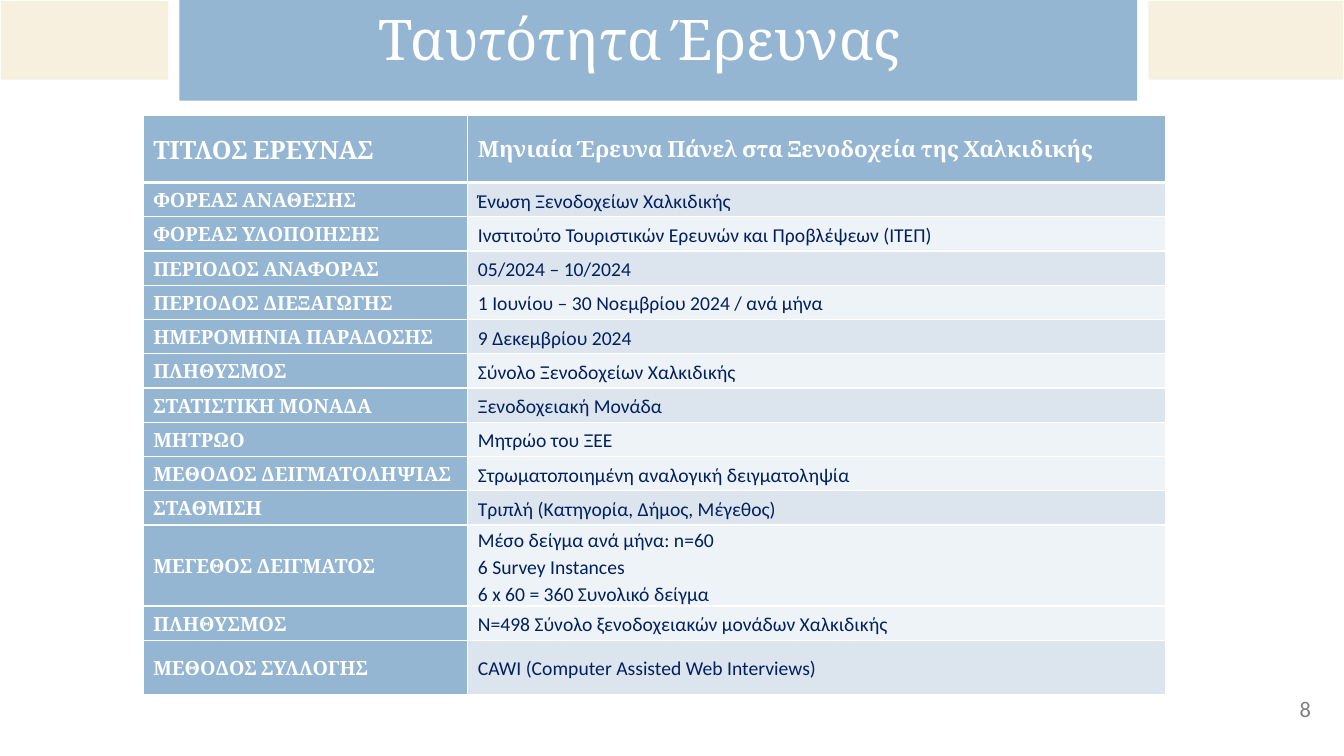
from lxml import etree
from pptx import Presentation
from pptx.dml.color import RGBColor
from pptx.enum.shapes import MSO_SHAPE as Shape
from pptx.enum.text import MSO_ANCHOR as Anchor, MSO_AUTO_SIZE as AutoSize, PP_ALIGN as Align
from pptx.oxml.ns import qn
from pptx.util import Emu, Pt

EMU_PER_PX = 9144
COLORS = {
    "blue": "94B6D2", "cream": "F7F0DE", "white": "FFFFFF", "navy": "002060",
    "grey": "808080", "tint": "DCE5EE", "pale": "EEF3F7",
}
HEADING = ("ΤΙΤΛΟΣ ΕΡΕΥΝΑΣ", "Μηνιαία Έρευνα Πάνελ στα Ξενοδοχεία της Χαλκιδικής")
DETAILS = [
    ("ΦΟΡΕΑΣ ΑΝΑΘΕΣΗΣ", "Ένωση Ξενοδοχείων Χαλκιδικής", "tint"),
    ("ΦΟΡΕΑΣ ΥΛΟΠΟΙΗΣΗΣ", "Ινστιτούτο Τουριστικών Ερευνών και Προβλέψεων (ΙΤΕΠ)", "pale"),
    ("ΠΕΡΙΟΔΟΣ ΑΝΑΦΟΡΑΣ", "05/2024 – 10/2024", "tint"),
    ("ΠΕΡΙΟΔΟΣ ΔΙΕΞΑΓΩΓΗΣ", "1 Ιουνίου – 30 Νοεμβρίου 2024 / ανά μήνα", "pale"),
    ("ΗΜΕΡΟΜΗΝΙΑ ΠΑΡΑΔΟΣΗΣ", "9 Δεκεμβρίου 2024", "tint"),
    ("ΠΛΗΘΥΣΜΟΣ", "Σύνολο Ξενοδοχείων Χαλκιδικής", "pale"),
    ("ΣΤΑΤΙΣΤΙΚΗ ΜΟΝΑΔΑ", "Ξενοδοχειακή Μονάδα", "tint"),
    ("ΜΗΤΡΩΟ", "Μητρώο του ΞΕΕ", "pale"),
    ("ΜΕΘΟΔΟΣ ΔΕΙΓΜΑΤΟΛΗΨΙΑΣ", "Στρωματοποιημένη αναλογική δειγματοληψία", "pale"),
    ("ΣΤΑΘΜΙΣΗ", "Τριπλή (Κατηγορία, Δήμος, Μέγεθος)", "tint"),
    ("ΜΕΓΕΘΟΣ ΔΕΙΓΜΑΤΟΣ",
     "Μέσο δείγμα ανά μήνα: n=60\n6 Survey Instances\n6 x 60 = 360 Συνολικό δείγμα", "pale"),
    ("ΠΛΗΘΥΣΜΟΣ", "N=498 Σύνολο ξενοδοχειακών μονάδων Χαλκιδικής", "pale"),
    ("ΜΕΘΟΔΟΣ ΣΥΛΛΟΓΗΣ", "CAWI (Computer Assisted Web Interviews)", "tint"),
]


def px(length):
    return Emu(length * EMU_PER_PX)


class SurveySlide:
    """Holds the slide with its fonts and colours."""

    heading_font = "Cambria"
    body_font = "Calibri"

    def __init__(self, deck):
        self.slide = deck.slides.add_slide(deck.slide_layouts[5])
        self.shapes = self.slide.shapes

    def color(self, name):
        return RGBColor.from_string(COLORS[name])

    def style(self, paragraph, font, size, color, align, bold=False):
        paragraph.alignment = align
        paragraph.font.name = font
        paragraph.font.size = Pt(size)
        paragraph.font.bold = bold
        paragraph.font.color.rgb = self.color(color)

    def band(self, left, top, width, height, color):
        band = self.shapes.add_shape(Shape.RECTANGLE, *map(px, (left, top, width, height)))
        band.shadow.inherit = False
        band.fill.solid()
        band.fill.fore_color.rgb = self.color(color)
        band.line.fill.background()

    def title(self, text, left, top, width, height):
        """Fill the title placeholder and bring it in front of the bands."""
        title = self.shapes.title
        title.left, title.top, title.width, title.height = map(px, (left, top, width, height))
        frame = title.text_frame
        frame.text = text
        frame.vertical_anchor = Anchor.TOP
        frame.auto_size = AutoSize.SHAPE_TO_FIT_TEXT
        self.style(frame.paragraphs[0], self.heading_font, 40, "white", Align.CENTER)
        self.shapes._spTree.append(title._element)

    def page_number(self, number, left, top, width, height):
        frame = self.shapes.add_textbox(*map(px, (left, top, width, height))).text_frame
        frame.word_wrap = True
        frame.vertical_anchor = Anchor.MIDDLE
        frame.text = number
        self.style(frame.paragraphs[0], self.body_font, 16, "grey", Align.CENTER)

    def borders(self, cell, top, bottom):
        properties = cell._tc.get_or_add_tcPr()
        for place, (side, width) in enumerate(zip("LRTB", (1, 1, top, bottom))):
            line = etree.Element(qn(f"a:ln{side}"), w=str(Pt(width)))
            fill = etree.SubElement(line, qn("a:solidFill"))
            etree.SubElement(fill, qn("a:srgbClr"), val=COLORS["white"])
            properties.insert(place, line)

    def cell(self, cell, text, fill, font, size, color, bold, align=Align.JUSTIFY):
        cell.fill.solid()
        cell.fill.fore_color.rgb = self.color(fill)
        cell.vertical_anchor = Anchor.MIDDLE
        cell.margin_left = cell.margin_right = px(10)
        cell.margin_top = cell.margin_bottom = 0
        cell.text = text
        for paragraph in cell.text_frame.paragraphs:
            indents = paragraph._p.get_or_add_pPr()
            indents.set("marL", str(px(20)))
            indents.set("indent", str(px(-20)))
            paragraph.line_spacing = 1.15
            self.style(paragraph, font, size, color, align, bold)

    def table(self, heading, details, left, top, columns, heights):
        table = self.shapes.add_table(
            len(heights), len(columns),
            *map(px, (left, top, sum(columns), sum(heights)))).table
        for column, width in zip(table.columns, columns):
            column.width = px(width)
        for row, height in zip(table.rows, heights):
            row.height = px(height)
        label, survey = table.rows[0].cells
        self.cell(label, heading[0], "blue", self.heading_font, 18, "white", True)
        self.cell(survey, heading[1], "blue", self.heading_font, 16, "white", True, Align.LEFT)
        for index, (name, value, shade) in enumerate(details, 1):
            label, answer = table.rows[index].cells
            self.cell(label, name, "blue", self.heading_font, 14, "white", True)
            self.cell(answer, value, shade, self.body_font, 14, "navy", False)
        for index, row in enumerate(table.rows):
            for cell in row.cells:
                self.borders(cell, top=3 if index == 1 else 1, bottom=3 if index == 0 else 1)


def main():
    deck = Presentation()
    deck.slide_width, deck.slide_height = px(1333), px(750)
    survey = SurveySlide(deck)
    survey.band(1139, 1, 193, 78, "cream")
    survey.band(178, 0, 950, 100, "blue")
    survey.band(1, 1, 166, 78, "cream")
    survey.page_number("8", 1269, 683, 51, 40)
    survey.title("Ταυτότητα Έρευνας", 361, -1, 546, 77)
    survey.table(HEADING, DETAILS, 142, 114, [322, 692], [67] + [34] * 12 + [54])
    deck.save("out.pptx")


if __name__ == "__main__":
    main()
